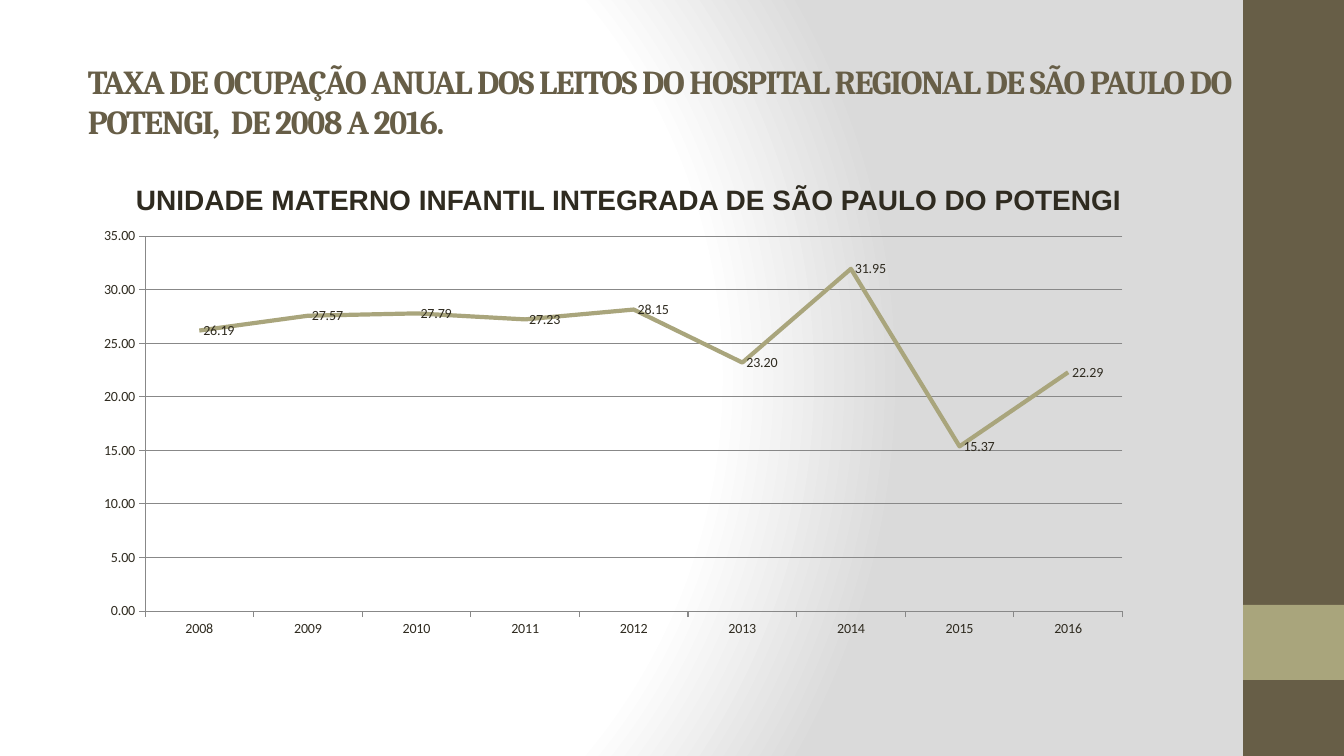
from lxml import etree
from pptx import Presentation
from pptx.chart.data import CategoryChartData
from pptx.dml.color import RGBColor
from pptx.enum.chart import XL_CHART_TYPE as ChartType, XL_LABEL_POSITION as LabelPosition
from pptx.enum.chart import XL_TICK_MARK as TickMark
from pptx.enum.shapes import MSO_SHAPE as Shape
from pptx.enum.text import MSO_ANCHOR as Anchor, MSO_AUTO_SIZE as AutoSize
from pptx.oxml import parse_xml
from pptx.oxml.ns import nsdecls, qn
from pptx.util import Pt

TITLE = "TAXA DE OCUPAÇÃO ANUAL DOS LEITOS DO HOSPITAL REGIONAL DE SÃO PAULO DO POTENGI,  DE 2008 A 2016."
HOSPITAL = "UNIDADE MATERNO INFANTIL INTEGRADA DE SÃO PAULO DO POTENGI"
OCCUPANCY = {
    "2008": 26.19, "2009": 27.57, "2010": 27.79,
    "2011": 27.23, "2012": 28.15, "2013": 23.20,
    "2014": 31.95, "2015": 15.37, "2016": 22.29,
}
BROWN, SAND, INK, GRID = "675E47", "A9A57C", "2F2B20", "888888"
BACKGROUND_STOPS = [(0, "FFFFFF"), (75, "FFFFFF"), (100, "DADADA")]

# Lengths in px: left, top, width, height
WIDTH, HEIGHT = 1344, 756
SIDEBAR = [((1243, 0, 101, HEIGHT), BROWN), ((1243, 605, 101, 75), SAND)]
TITLE_BOX = (78, 53, 1195, 96)
HOSPITAL_BOX = (78, 178, 1127, 44)
HOSPITAL_INDENT = 48
CHART_BOX = (76, 219, 1047, 431)
PLOT_SHARE = {"x": 0.066, "y": 0.04, "w": 0.934, "h": 0.87}


def px(length):
    return round(length * 914400 / 100.8)


def place(box):
    return [px(length) for length in box]


def color(code):
    return RGBColor.from_string(code)


def style_font(font, name, size, code, bold=False):
    font.name, font.size, font.bold = name, Pt(size), bold
    font.color.rgb = color(code)


def paint_background(slide):
    """Radial gradient centred left of the middle."""
    slide.background.fill.gradient()
    stops = "".join(
        f'<a:gs pos="{share * 1000}"><a:srgbClr val="{code}"/></a:gs>'
        for share, code in BACKGROUND_STOPS)
    gradient = parse_xml(
        f'<a:gradFill {nsdecls("a")} rotWithShape="1"><a:gsLst>{stops}</a:gsLst>'
        '<a:path path="circle"><a:fillToRect l="20000" t="50000" r="100000" b="50000"/>'
        '</a:path></a:gradFill>')
    linear = next(slide.element.iter(qn("a:gradFill")))
    linear.getparent().replace(linear, gradient)


def add_bar(slide, box, code):
    bar = slide.shapes.add_shape(Shape.RECTANGLE, *place(box))
    bar.shadow.inherit = False
    bar.fill.solid()
    bar.fill.fore_color.rgb = color(code)
    bar.line.fill.background()


def add_text(slide, box, text, font_name, size, code):
    frame = slide.shapes.add_textbox(*place(box)).text_frame
    frame.word_wrap = True
    run = frame.paragraphs[0].add_run()
    run.text = text
    style_font(run.font, font_name, size, code, bold=True)
    return frame


def style_axis(axis):
    axis.major_tick_mark, axis.minor_tick_mark = TickMark.OUTSIDE, TickMark.NONE
    axis.format.line.color.rgb = color(GRID)


def add_occupancy_chart(slide):
    data = CategoryChartData(number_format="0.00")
    data.categories = list(OCCUPANCY)
    data.add_series("Series 1", list(OCCUPANCY.values()))
    chart = slide.shapes.add_chart(ChartType.LINE, *place(CHART_BOX), data).chart
    chart.has_legend = chart.has_title = False
    style_font(chart.font, "Calibri", 10, INK)

    style_axis(chart.category_axis)
    rates = chart.value_axis
    style_axis(rates)
    rates.minimum_scale, rates.maximum_scale, rates.major_unit = 0, 35, 5
    rates.tick_labels.number_format = "0.00"
    rates.tick_labels.number_format_is_linked = False
    rates.has_major_gridlines = True
    rates.major_gridlines.format.line.color.rgb = color(GRID)

    plot = chart.plots[0]
    plot.vary_by_categories = False
    curve = plot.series[0]
    curve.smooth = False
    curve.format.line.color.rgb = color(SAND)
    curve.format.line.width = Pt(3)
    labels = curve.data_labels
    labels.show_value = True
    labels.position = LabelPosition.RIGHT
    labels.number_format, labels.number_format_is_linked = "0.00", False

    area = next(chart.element.iter(qn("c:plotArea")))
    for old in area.findall(qn("c:layout")):
        area.remove(old)
    layout = etree.Element(qn("c:layout"))
    manual = etree.SubElement(layout, qn("c:manualLayout"))
    settings = {"layoutTarget": "inner", "xMode": "edge", "yMode": "edge", **PLOT_SHARE}
    for tag, value in settings.items():
        etree.SubElement(manual, qn(f"c:{tag}")).set("val", str(value))
    area.insert(0, layout)


def main():
    deck = Presentation()
    deck.slide_width, deck.slide_height = px(WIDTH), px(HEIGHT)
    slide = deck.slides.add_slide(deck.slide_layouts[6])
    paint_background(slide)
    for box, code in SIDEBAR:
        add_bar(slide, box, code)

    title = add_text(slide, TITLE_BOX, TITLE, "Cambria", 24, BROWN)
    title.vertical_anchor = Anchor.MIDDLE
    title.paragraphs[0].runs[0].font._element.set("spc", "-100")

    hospital = add_text(slide, HOSPITAL_BOX, HOSPITAL, "Arial", 20, INK)
    hospital.auto_size = AutoSize.SHAPE_TO_FIT_TEXT
    hospital.paragraphs[0]._p.get_or_add_pPr().set("indent", str(px(HOSPITAL_INDENT)))

    add_occupancy_chart(slide)
    deck.save("out.pptx")


if __name__ == "__main__":
    main()
